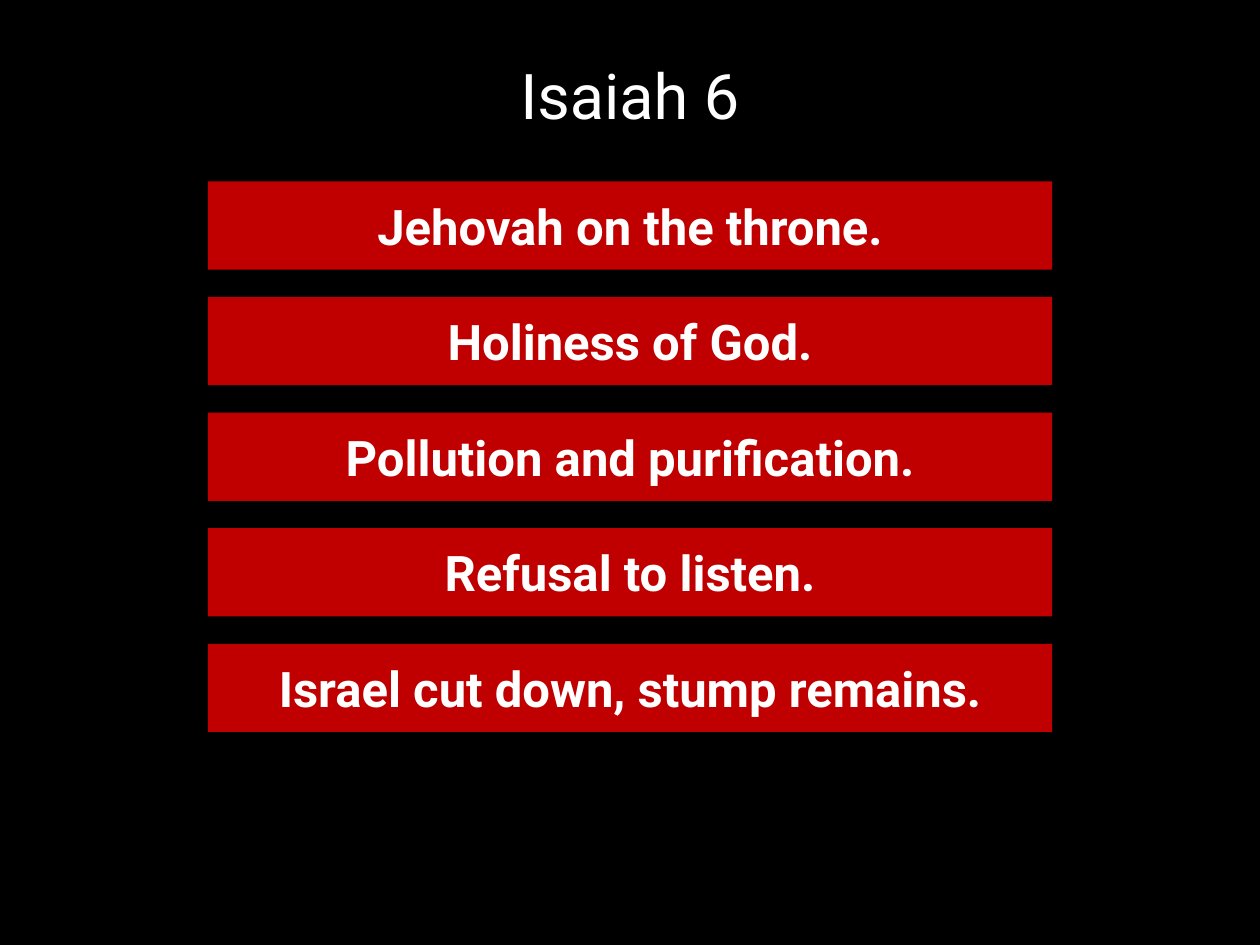
from pptx import Presentation, util as u
from pptx.dml.color import RGBColor
from pptx.enum import shapes, text

TITLE = "Isaiah 6"
POINTS = [
    "Jehovah on the throne.",
    "Holiness of God.",
    "Pollution and purification.",
    "Refusal to listen.",
    "Israel cut down, stump remains.",
]
BLACK, RED, WHITE = "000000", "C00000", "FFFFFF"
LEFT, TOP, WIDE, HIGH, STEP = 1.65, 1.44, 6.7, 0.7, 0.9175
HEAD = {"name": "Roboto", "size": u.Pt(36), "bold": False}
BODY = {"name": "Roboto", "size": u.Pt(28), "bold": True}


def paint(fill, tone):
    fill.solid()
    fill.fore_color.rgb = RGBColor.from_string(tone)


def write(shape, words, look, anchor):
    frame = shape.text_frame
    frame.text = words
    frame.word_wrap = True
    frame.auto_size = text.MSO_AUTO_SIZE.NONE
    frame.vertical_anchor = anchor
    line = frame.paragraphs[0]
    line.alignment = text.PP_ALIGN.CENTER
    font = line.runs[0].font
    for key, value in look.items():
        setattr(font, key, value)
    paint(font.fill, WHITE)
    return line


def main():
    deck = Presentation()
    deck.slide_width, deck.slide_height = u.Inches(10), u.Inches(7.5)
    slide = deck.slides.add_slide(deck.slide_layouts[5])
    paint(slide.background.fill, BLACK)

    title = slide.shapes.title
    place = {"left": 0.69, "top": 0.47, "width": 8.62, "height": 0.7}
    for key, value in place.items():
        setattr(title, key, u.Inches(value))
    line = write(title, TITLE, HEAD, text.MSO_ANCHOR.TOP)
    line.line_spacing = 0.9
    line.space_before = u.Pt(0)

    for row, words in enumerate(POINTS):
        box = [u.Inches(n) for n in (LEFT, TOP + row * STEP, WIDE, HIGH)]
        bar = slide.shapes.add_shape(shapes.MSO_SHAPE.RECTANGLE, *box)
        bar.shadow.inherit = False
        paint(bar.fill, RED)
        bar.line.fill.background()
        write(bar, words, BODY, text.MSO_ANCHOR.MIDDLE)

    deck.save("out.pptx")


if __name__ == "__main__":
    main()
